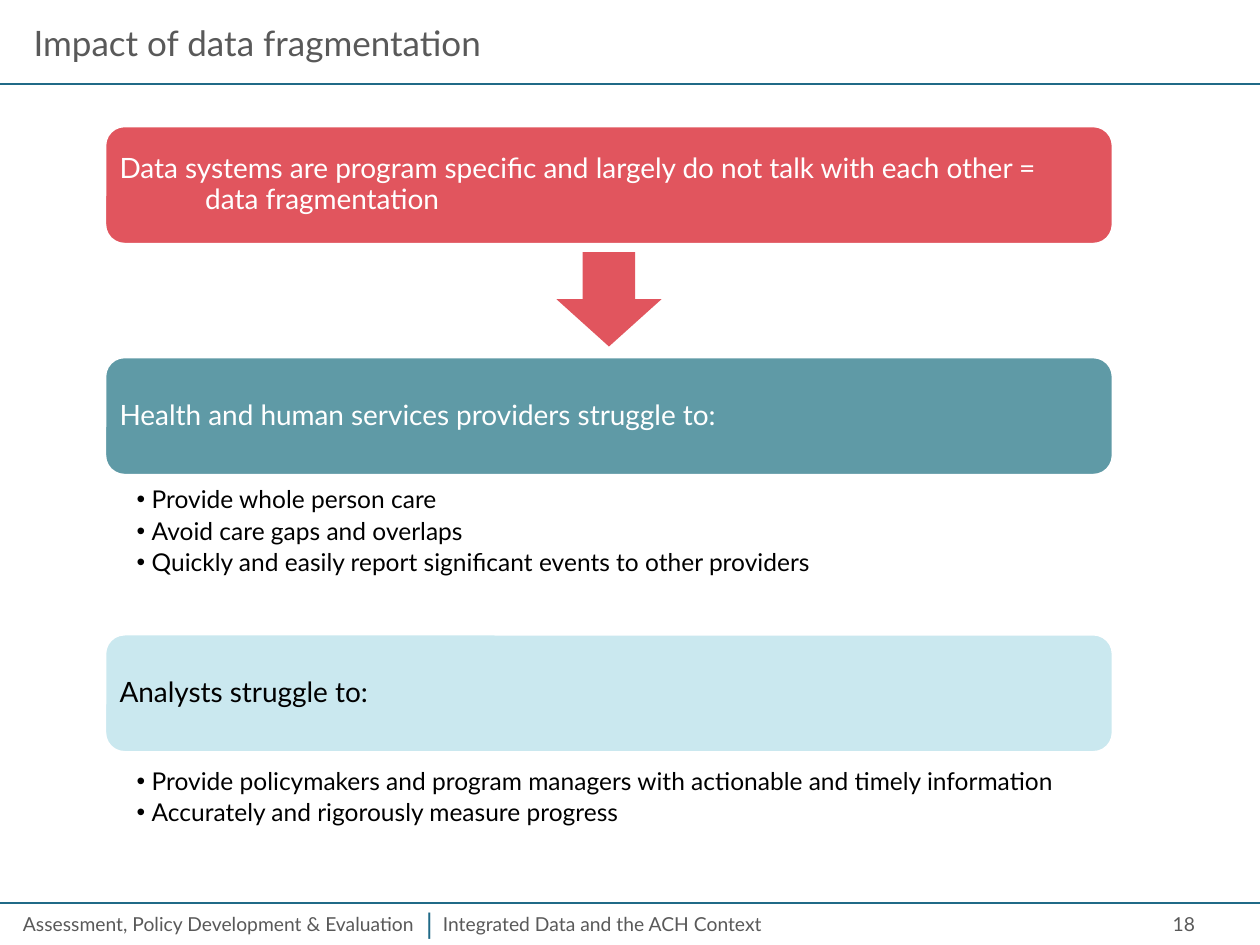
from lxml.etree import SubElement
from pptx import Presentation
from pptx.dml.color import RGBColor
from pptx.enum.shapes import MSO_CONNECTOR, MSO_SHAPE
from pptx.enum.text import MSO_ANCHOR, MSO_AUTO_SIZE, PP_ALIGN
from pptx.oxml.ns import qn
from pptx.util import Inches, Pt

COLORS = {"grey": "595959", "rule": "206A87", "red": "E1555E", "teal": "5F9AA6",
          "pale": "CAE8EF", "white": "FFFFFF", "black": "000000"}
RGB = {name: RGBColor.from_string(value) for name, value in COLORS.items()}

prs = Presentation()
prs.slide_width, prs.slide_height = Inches(10), Inches(7.5)
UNIT = prs.slide_width / 120  # square grid of 120 columns by 90 rows
LEFT, WIDTH, BOX_HEIGHT = 10, 96, 11.25


def grid(*cells):
    return [round(c * UNIT) for c in cells]


def style(p, size, color, align=PP_ALIGN.LEFT):
    p.font.name, p.font.size = "Lato", Pt(size)
    p.font.color.rgb = RGB[color]
    p.alignment = align


s = prs.slides.add_slide(prs.slide_layouts[3])
title, *lists = s.placeholders

# Header and footer
for row in (8, 86):
    rule = s.shapes.add_connector(MSO_CONNECTOR.STRAIGHT, *grid(0, row, 120, row))
    rule.line.color.rgb, rule.line.width = RGB["rule"], Pt(1.5)
    SubElement(rule._element.spPr, qn("a:effectLst"))

title.left, title.top, title.width, title.height = grid(2, 2, 116, 4)
tf = title.text_frame
tf.text = "Impact of data fragmentation"
tf.auto_size, tf.vertical_anchor = MSO_AUTO_SIZE.NONE, MSO_ANCHOR.MIDDLE
style(tf.paragraphs[0], 20, "grey")

footers = [
    ("Assessment, Policy Development & Evaluation", (1, 86.3, 43, 3.5), 11, "grey", PP_ALIGN.LEFT),
    ("Integrated Data and the ACH Context", (41, 86.3, 61, 3.5), 11, "grey", PP_ALIGN.LEFT),
    ("|", (38.9, 85.7, 4, 4.4), 16, "rule", PP_ALIGN.CENTER),
    ("18", (87, 86.3, 28, 3.5), 11, "grey", PP_ALIGN.RIGHT),
]
for text, cells, size, color, align in footers:
    tf = s.shapes.add_textbox(*grid(*cells)).text_frame
    tf.word_wrap = True
    tf.text = text
    style(tf.paragraphs[0], size, color, align)

# Coloured boxes; the first breaks onto an indented second line
boxes = [
    ("Data systems are program specific and largely do not talk with each other =\v"
     "data fragmentation", 12, "red", "white"),
    ("Health and human services providers struggle to:", 34, "teal", "white"),
    ("Analysts struggle to:", 60.4, "pale", "black"),
]
for text, row, fill, color in boxes:
    sp = s.shapes.add_shape(MSO_SHAPE.ROUNDED_RECTANGLE, *grid(LEFT, row, WIDTH, BOX_HEIGHT))
    sp.shadow.inherit = False
    sp.fill.solid()
    sp.fill.fore_color.rgb = RGB[fill]
    sp.line.color.rgb, sp.line.width = RGB["white"], Pt(1.5)
    tf = sp.text_frame
    tf.word_wrap, tf.vertical_anchor = True, MSO_ANCHOR.MIDDLE
    tf.margin_left = tf.margin_right = tf.margin_top = tf.margin_bottom = Inches(0.07)
    tf.text = text
    p = tf.paragraphs[0]
    style(p, 16, color)
    p.line_spacing = 0.9
    if "\v" in text:
        pPr = p._p.get_or_add_pPr()
        pPr.set("marL", str(Inches(0.68)))
        pPr.set("indent", str(-Inches(0.68)))

arrow = s.shapes.add_shape(MSO_SHAPE.DOWN_ARROW, *grid(53, 24, 10, 9))
arrow.shadow.inherit = False
arrow.fill.solid()
arrow.fill.fore_color.rgb = RGB["red"]
arrow.line.fill.background()

# Bullet lists under the second and third boxes
bullets = [
    (46.2, 9.8, ["Provide whole person care",
                 "Avoid care gaps and overlaps",
                 "Quickly and easily report significant events to other providers"]),
    (73, 7.1, ["Provide policymakers and program managers with actionable and timely information",
               "Accurately and rigorously measure progress"]),
]
for body, (row, height, items) in zip(lists, bullets):
    body.left, body.top, body.width, body.height = grid(LEFT, row, WIDTH, height)
    tf = body.text_frame
    tf.text = "\n".join(items)
    tf.auto_size, tf.vertical_anchor = MSO_AUTO_SIZE.NONE, MSO_ANCHOR.TOP
    tf.margin_left, tf.margin_right = Inches(0.25), Inches(0.11)
    tf.margin_top = tf.margin_bottom = Inches(0.02)
    for p in tf.paragraphs:
        style(p, 14, "black")
        p.line_spacing, p.space_before, p.space_after = 0.9, Pt(0), Pt(2.8)
        pPr = p._p.get_or_add_pPr()
        pPr.set("marL", str(Inches(0.12)))
        pPr.set("indent", str(-Inches(0.12)))

prs.save("out.pptx")
